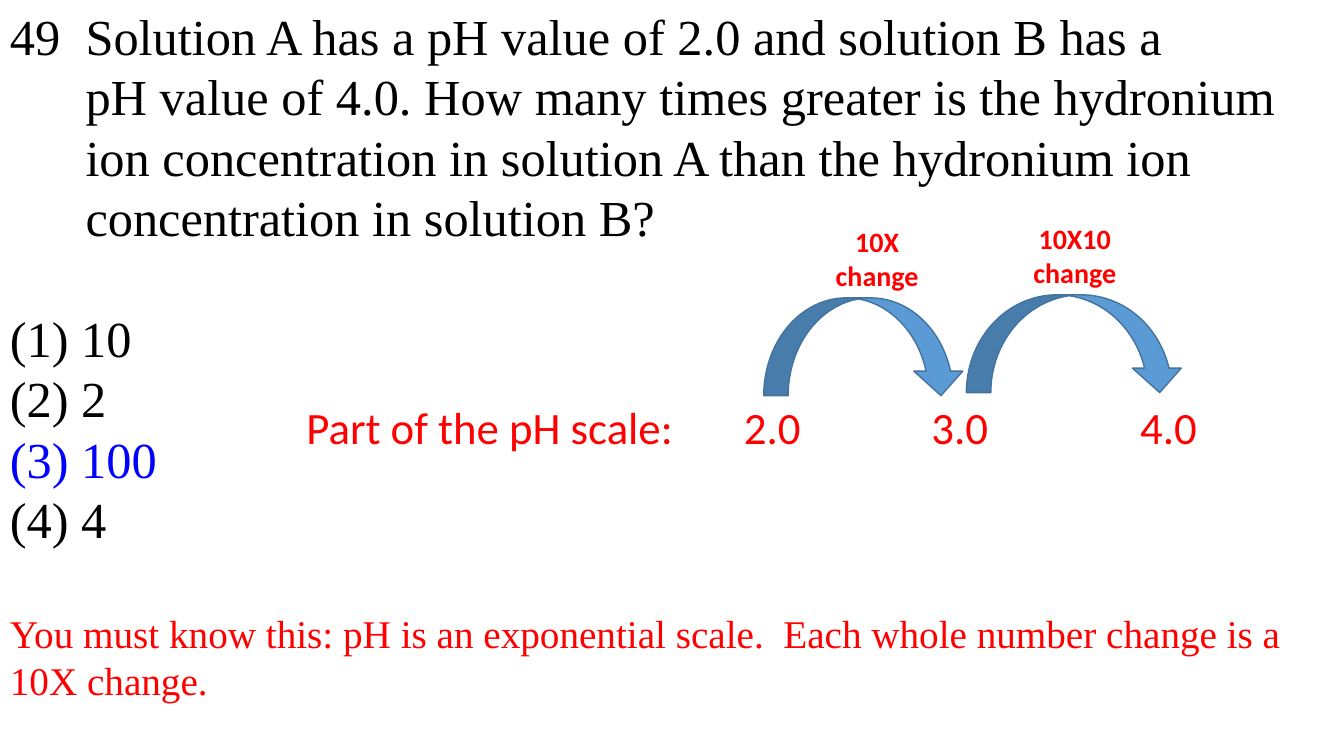
from lxml import etree
from pptx import Presentation
from pptx.dml.color import RGBColor
from pptx.enum.shapes import MSO_SHAPE
from pptx.enum.text import PP_ALIGN
from pptx.oxml.ns import qn
from pptx.util import Inches, Pt

BLACK = RGBColor(0, 0, 0)
BLUE = RGBColor(0, 0, 0xFF)
RED = RGBColor(0xFF, 0, 0)
ARROW_FILL = RGBColor(0x5B, 0x9B, 0xD5)
ARROW_LINE = RGBColor(0x43, 0x73, 0x9E)
ARROW = MSO_SHAPE.CURVED_RIGHT_ARROW
CENTER = PP_ALIGN.CENTER
SERIF, SANS = "Times New Roman", "Calibri"

# Content
QUESTION = ("49\tSolution A has a pH value of 2.0 and solution B has a\v"
            "pH value of 4.0. How many times greater is the hydronium\v"
            "ion concentration in solution A than the hydronium ion\v"
            "concentration in solution B?")
CHOICES = ["(1) 10", "(2) 2", "(3) 100", "(4) 4"]
ANSWER = "(3) 100"
NOTE = ("You must know this: pH is an exponential scale.  "
        "Each whole number change is a 10X change.")
SCALE = "Part of the pH scale:\t2.0\t3.0\t4.0"
SCALE_TABS = [4.34, 6.2, 8.27]
HANG = 0.75
# Each step: arrow frame, label position, label
STEPS = [((8.09, 2.44, 0.97, 2.0), (8.08, 2.18), "10X\vchange"),
         ((10.18, 2.33, 0.97, 2.16), (10.04, 2.15), "10X10\vchange")]
LABEL_SIZE = (1.24, 0.77)

prs = Presentation()
prs.slide_width, prs.slide_height = Inches(13.33), Inches(7.5)
slide = prs.slides.add_slide(prs.slide_layouts[6])


def add_text(box, lines, align=None, **font):
    """Add a text box with one paragraph per line; return its paragraphs."""
    tf = slide.shapes.add_textbox(*map(Inches, box)).text_frame
    tf.word_wrap = True
    for i, line in enumerate(lines):
        p = tf.add_paragraph() if i else tf.paragraphs[0]
        p.text = line
        p.alignment = align
        for r in p.runs:
            r.font.color.rgb = BLUE if line == ANSWER else font["color"]
            for key in ("name", "size", "bold"):
                setattr(r.font, key, font.get(key))
    return tf.paragraphs


def set_tabs(p, stops):
    tabs = etree.SubElement(p._p.get_or_add_pPr(), qn("a:tabLst"))
    for stop in stops:
        etree.SubElement(tabs, qn("a:tab"), pos=str(Inches(stop)), algn="l")


# Question and choices
question, first_choice, *_ = add_text((0, 0, 13.33, 5.55), [QUESTION] + CHOICES,
                                      name=SERIF, size=Pt(36), color=BLACK)
first_choice.space_before = Pt(43)
pPr = question._p.get_or_add_pPr()
pPr.set("marL", str(Inches(HANG)))
pPr.set("indent", str(-Inches(HANG)))
set_tabs(question, [HANG])

# Note and pH scale
add_text((0, 6, 13.33, 1.04), [NOTE], name=SERIF, size=Pt(28), color=RED)
scale, = add_text((2.94, 3.92, 9.89, 0.64), [SCALE],
                  name=SANS, size=Pt(32), color=RED)
set_tabs(scale, SCALE_TABS)

# Steps along the scale
for frame, corner, label in STEPS:
    sp = slide.shapes.add_shape(ARROW, *map(Inches, frame))
    sp.rotation = 90
    sp._element.spPr.find(qn("a:xfrm")).set("flipV", "1")
    sp.shadow.inherit = False
    sp.fill.solid()
    sp.fill.fore_color.rgb = ARROW_FILL
    sp.line.color.rgb = ARROW_LINE
    sp.line.width = Pt(1)
    add_text(corner + LABEL_SIZE, [label], CENTER,
             name=SANS, size=Pt(20), bold=True, color=RED)

prs.save("out.pptx")
